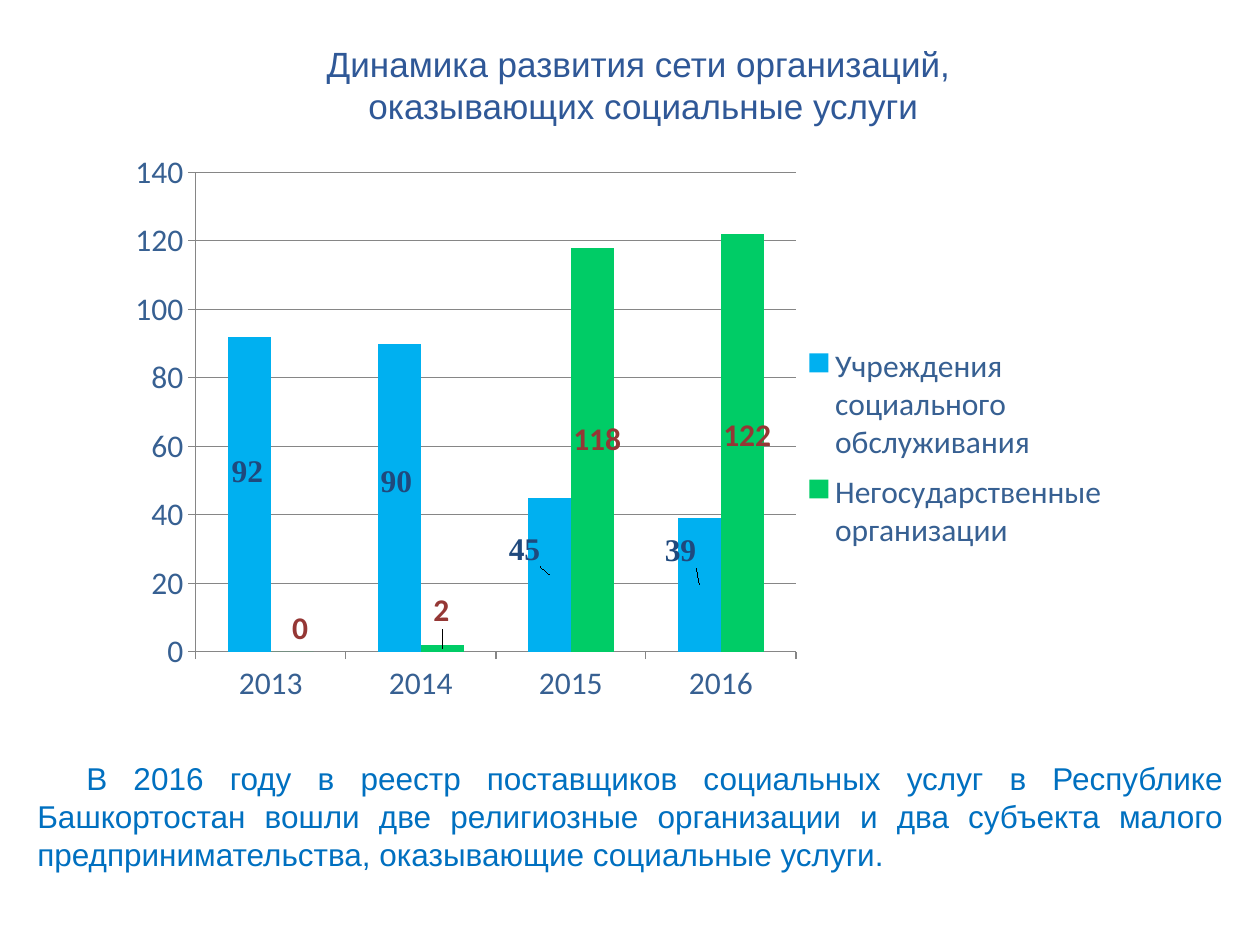
from dataclasses import dataclass

from lxml import etree
from pptx import Presentation
from pptx import util as u
from pptx.chart.data import CategoryChartData
from pptx.dml.color import RGBColor
from pptx.enum import chart as ch
from pptx.enum import text as t
from pptx.oxml import parse_xml
from pptx.oxml.ns import nsdecls

SCALE = 914400 / 126
COLORS = {
    "title": "2F5897", "note": "0070C0", "axis": "376092", "grid": "868686",
    "state": "00B0F0", "private": "00CC66", "navy": "1F497D", "red": "953735",
}
YEARS = ("2013", "2014", "2015", "2016")


@dataclass
class Group:
    name: str
    vals: tuple
    fill: str
    ink: str
    font: str
    shifts: tuple  # label offsets in px from the bar centre


GROUPS = (
    Group("Учреждения социального обслуживания", (92, 90, 45, 39),
          "state", "navy", "Times New Roman",
          ((-2, -22), (-3, -16), (-25, -25), (-19, -34))),
    Group("Негосударственные организации", (0, 2, 118, 122),
          "private", "red", "Calibri",
          ((8, -24), (-1, -38), (5, -10), (5, -7))),
)
CHART = (123, 145, 997, 595)


def px(n: int) -> int:
    return round(n * SCALE)


def rgb(key: str) -> RGBColor:
    return RGBColor.from_string(COLORS[key])


def style(font, size: int, color: str, face: str, bold: bool = False) -> None:
    font.size, font.name, font.bold = u.Pt(size), face, bold
    font.color.rgb = rgb(color)


def write(shape, words: str, *, size: int, color: str, align, anchor,
          face: str = "Arial", indent: int = 0) -> None:
    frame = shape.text_frame
    frame.word_wrap, frame.vertical_anchor = True, anchor
    frame.text = words
    para = frame.paragraphs[0]
    para.alignment = align
    if indent:
        para._p.get_or_add_pPr().set("indent", str(px(indent)))
    for run in para.runs:
        style(run.font, size, color, face)


def place(shape, x: int, y: int, w: int, h: int) -> None:
    shape.left, shape.top, shape.width, shape.height = map(px, (x, y, w, h))


def layout(inner: bool = False, **parts: float) -> etree._Element:
    """Build a manual layout in fractions of the chart."""
    rows = '<c:layoutTarget val="inner"/>' if inner else ""
    if "w" in parts:
        rows += '<c:xMode val="edge"/><c:yMode val="edge"/>'
    rows += "".join(f'<c:{k} val="{v:.3f}"/>' for k, v in parts.items())
    return parse_xml(f'<c:layout {nsdecls("c")}><c:manualLayout>{rows}'
                     "</c:manualLayout></c:layout>")


def set_layout(node, lay, after: str) -> None:
    """Swap in a layout, right after the named child or first if none."""
    for old in node.findall(lay.tag):
        node.remove(old)
    mark = node.find(lay.tag.replace("layout", after)) if after else None
    if mark is None:
        node.insert(0, lay)
    else:
        mark.addnext(lay)


def draw_group(ser, group: Group) -> None:
    ser.format.fill.solid()
    ser.format.fill.fore_color.rgb = rgb(group.fill)
    ser.invert_if_negative = False
    labels = ser.data_labels
    labels.show_value, labels.position = True, ch.XL_LABEL_POSITION.CENTER
    style(labels.font, 18, group.ink, group.font, True)
    for i, (dx, dy) in enumerate(group.shifts):
        label = ser.points[i].data_label
        style(label.font, 18, group.ink, group.font, True)
        label.position = ch.XL_LABEL_POSITION.CENTER
        lay = layout(x=dx / CHART[2], y=dy / CHART[3])
        set_layout(label._dLbl, lay, "idx")


def draw_chart(slide) -> None:
    data = CategoryChartData()
    data.categories = YEARS
    for group in GROUPS:
        data.add_series(group.name, group.vals)
    chart = slide.shapes.add_chart(ch.XL_CHART_TYPE.COLUMN_CLUSTERED,
                                   *map(px, CHART), data).chart
    style(chart.font, 18, "axis", "Calibri")
    chart.has_title = False
    plot = chart.plots[0]
    plot.gap_width, plot.overlap, plot.vary_by_categories = 150, 0, False
    for ser, group in zip(plot.series, GROUPS):
        draw_group(ser, group)

    val = chart.value_axis
    val.minimum_scale, val.maximum_scale, val.major_unit = 0, 140, 20
    val.has_major_gridlines = True
    for axis in (chart.category_axis, val):
        axis.major_tick_mark = ch.XL_TICK_MARK.OUTSIDE
        style(axis.tick_labels.font, 18, "axis", "Calibri")
    for part in (chart.category_axis, val, val.major_gridlines):
        part.format.line.color.rgb = rgb("grid")
        part.format.line.width = u.Pt(0.75)

    chart.has_legend = True
    legend = chart.legend
    legend.position = ch.XL_LEGEND_POSITION.RIGHT
    legend.include_in_layout = False
    style(legend.font, 18, "axis", "Calibri")
    set_layout(legend._element, layout(x=0.68, y=0.32, w=0.31, h=0.38),
               "legendPos")
    area = chart._chartSpace.chart.plotArea
    set_layout(area, layout(True, x=0.073, y=0.046, w=0.602, h=0.806), "")


def main() -> None:
    prs = Presentation()
    prs.slide_width, prs.slide_height = px(1260), px(945)
    slide = prs.slides.add_slide(prs.slide_layouts[5])
    title = slide.shapes.title
    place(title, 122, 32, 1043, 105)
    write(title, "Динамика развития сети организаций, \vоказывающих социальные услуги",
          size=20, color="title", align=t.PP_ALIGN.CENTER,
          anchor=t.MSO_ANCHOR.MIDDLE)
    draw_chart(slide)
    note = slide.shapes.add_textbox(*map(px, (25, 753, 1211, 127)))
    write(note, "В 2016 году в реестр поставщиков социальных услуг в Республике "
          "Башкортостан вошли две религиозные организации и два субъекта малого "
          "предпринимательства, оказывающие социальные услуги.",
          size=18, color="note", align=t.PP_ALIGN.JUSTIFY,
          anchor=t.MSO_ANCHOR.TOP, indent=49)
    prs.save("out.pptx")


if __name__ == "__main__":
    main()
